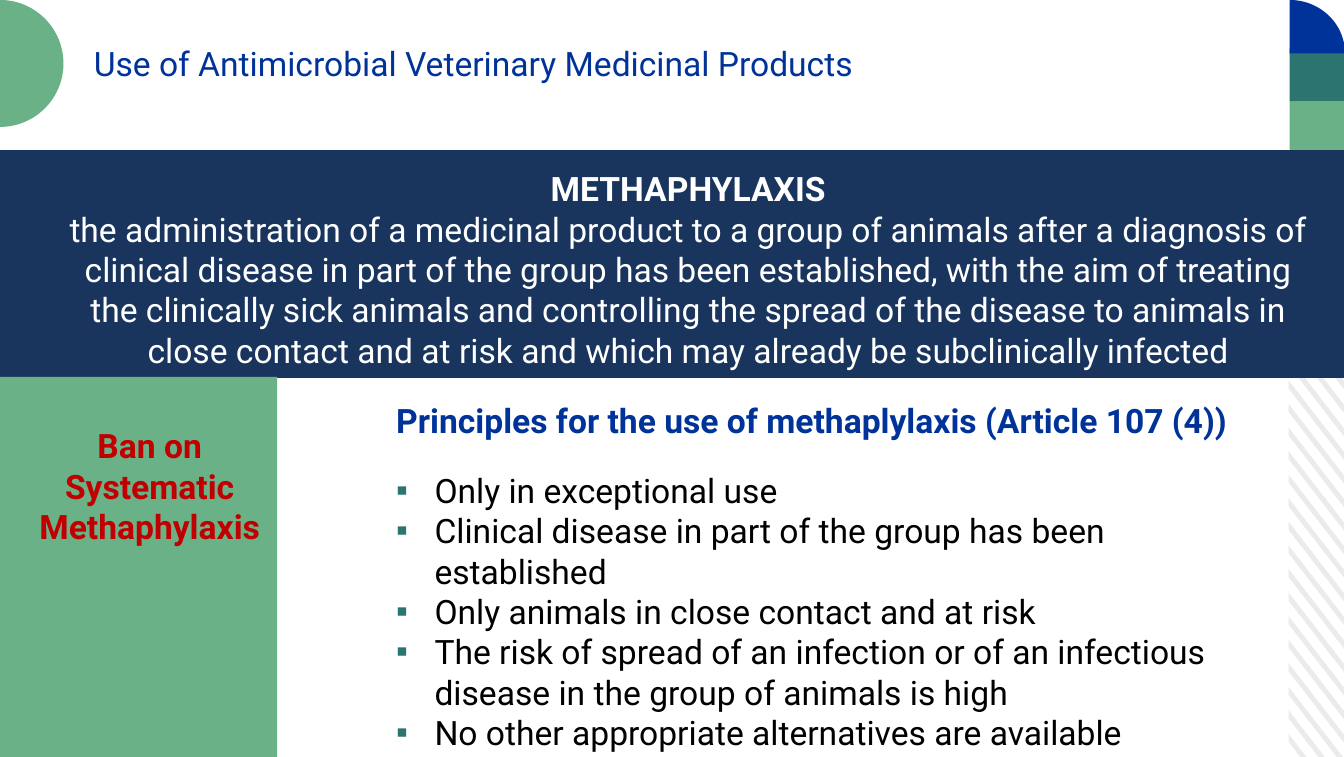
import math
from pptx import Presentation
from pptx.dml.color import RGBColor
from pptx.enum.shapes import MSO_SHAPE
from pptx.enum.text import MSO_ANCHOR, MSO_AUTO_SIZE, PP_ALIGN
from pptx.oxml.ns import qn
from pptx.util import Inches, Pt
from lxml import etree

RECTANGLE = MSO_SHAPE.RECTANGLE
TOP, MIDDLE = MSO_ANCHOR.TOP, MSO_ANCHOR.MIDDLE
LEFT, CENTER = PP_ALIGN.LEFT, PP_ALIGN.CENTER
NO_FIT = MSO_AUTO_SIZE.NONE

TITLE = "Use of Antimicrobial Veterinary Medicinal Products"
DEFINITION = [
    "METHAPHYLAXIS",
    "the administration of a medicinal product to a group of animals after a "
    "diagnosis of clinical disease in part of the group has been established, "
    "with the aim of treating the clinically sick animals and controlling the "
    "spread of the disease to animals in close contact and at risk and which "
    "may already be subclinically infected",
]
BAN = ["Ban on Systematic Methaphylaxis"]
PRINCIPLES = [
    "Principles for the use of methaplylaxis (Article 107 (4))",
    "Only in exceptional use",
    "Clinical disease in part of the group has been established",
    "Only animals in close contact and at risk",
    "The risk of spread of an infection or of an infectious disease in the "
    "group of animals is high",
    "No other appropriate alternatives are available",
]
COLORS = {
    "blue": "003399", "navy": "19355D", "teal": "2C7470", "green": "6BB188",
    "stripe": "ECEBEB", "red": "C00000", "white": "FFFFFF", "black": "000000",
}
FONT, SIZE = "Roboto", 24
WIDTH, HEIGHT = 13.33, 7.51
BAND_TOP, BAND_BOTTOM = 1.49, 3.74
STRIP_LEFT, STRIP_WIDTH = 12.78, 0.55
STRIPE_COUNT, STRIPE_STEP, STRIPE_THICK, STRIPE_DROP = 25, 0.2338, 0.08, 0.71
LOWEST_STRIPE = 7.28
TILE = 0.53
DISC_RADIUS = 0.63


def color(name):
    return RGBColor.from_string(COLORS[name])


def paint(shape, fill):
    shape.shadow.inherit = False
    shape.fill.solid()
    shape.fill.fore_color.rgb = color(fill)
    shape.line.fill.background()


def block(slide, left, top, width, height, fill):
    box = [Inches(v) for v in (left, top, width, height)]
    paint(slide.shapes.add_shape(RECTANGLE, *box), fill)


def outline(slide, contours, fill):
    emu = [[(Inches(x), Inches(y)) for x, y in points] for points in contours]
    builder = slide.shapes.build_freeform(*emu[0][0], scale=1.0)
    builder.add_line_segments(emu[0][1:], close=True)
    for points in emu[1:]:
        builder.move_to(*points[0])
        builder.add_line_segments(points[1:], close=True)
    paint(builder.convert_to_shape(), fill)


def sector(cx, cy, rx, ry, start, end):
    steps = 48
    angles = [math.radians(start + (end - start) * i / steps) for i in range(steps + 1)]
    return [(cx, cy)] + [(cx + rx * math.cos(a), cy + ry * math.sin(a)) for a in angles]


def stripe(top):
    def edge_end(y):
        share = min(1, (HEIGHT - y) / STRIPE_DROP)
        return STRIP_LEFT + share * STRIP_WIDTH, y + share * STRIPE_DROP

    bottom = top + STRIPE_THICK
    return [(STRIP_LEFT, top), edge_end(top), edge_end(bottom), (STRIP_LEFT, bottom)]


def write(holder, box, lines, ink, align, anchor=TOP, bold_first=True, rest_ink=None):
    holder.left, holder.top, holder.width, holder.height = map(Inches, box)
    frame = holder.text_frame
    frame.text = "\n".join(lines)
    frame.word_wrap = True
    frame.auto_size = NO_FIT
    frame.vertical_anchor = anchor
    for i, paragraph in enumerate(frame.paragraphs):
        paragraph.alignment = align
        paragraph.line_spacing = 1.0
        paragraph.space_before = paragraph.space_after = Pt(0)
        for run in paragraph.runs:
            run.font.name = FONT
            run.font.size = Pt(SIZE)
            run.font.bold = bold_first and i == 0
            run.font.color.rgb = color(rest_ink if rest_ink and i else ink)
    return frame.paragraphs


def set_bullet(paragraph, marked):
    props = paragraph._p.get_or_add_pPr()
    indent = Inches(0.38) if marked else 0
    props.set("marL", str(indent))
    props.set("indent", str(-indent))
    if marked:
        tint = etree.SubElement(props, qn("a:buClr"))
        etree.SubElement(tint, qn("a:srgbClr"), val=COLORS["teal"])
        etree.SubElement(props, qn("a:buFont"), typeface="Arial")
        etree.SubElement(props, qn("a:buChar"), char="▪")
    else:
        etree.SubElement(props, qn("a:buNone"))


def main():
    deck = Presentation()
    deck.slide_width, deck.slide_height = Inches(WIDTH), Inches(HEIGHT)
    slide = deck.slides.add_slide(deck.slide_layouts[1])
    title, body = slide.placeholders

    tops = [LOWEST_STRIPE - i * STRIPE_STEP for i in range(STRIPE_COUNT)]
    outline(slide, [stripe(top) for top in tops], "stripe")
    block(slide, STRIP_LEFT + 0.01, 0.48, STRIP_WIDTH, TILE, "teal")
    block(slide, STRIP_LEFT + 0.01, 0.48 + TILE, STRIP_WIDTH, TILE, "green")
    outline(slide, [sector(STRIP_LEFT + 0.01, TILE, STRIP_WIDTH, TILE, -90, 0)], "blue")
    outline(slide, [sector(0, DISC_RADIUS, DISC_RADIUS, DISC_RADIUS, -90, 90)], "green")
    block(slide, 0, BAND_TOP, WIDTH, BAND_BOTTOM - BAND_TOP + 0.01, "navy")
    block(slide, 0, BAND_BOTTOM, 2.75, HEIGHT - BAND_BOTTOM, "green")

    write(title, (0.83, 0.34, 8.76, 0.58), [TITLE], "blue", LEFT, MIDDLE, bold_first=False)
    principles = write(body, (3.83, 3.92, 8.7, 3.59), PRINCIPLES, "blue", LEFT,
                       rest_ink="black")
    principles[1].space_before = Pt(21)
    for i, paragraph in enumerate(principles):
        set_bullet(paragraph, marked=i > 0)

    for box, lines, ink in [
        ((0.57, 1.62, 12.51, 2.12), DEFINITION, "white"),
        ((0.11, 4.17, 2.75, 1.3), BAN, "red"),
    ]:
        write(slide.shapes.add_textbox(0, 0, 0, 0), box, lines, ink, CENTER)

    deck.save("out.pptx")


if __name__ == "__main__":
    main()
